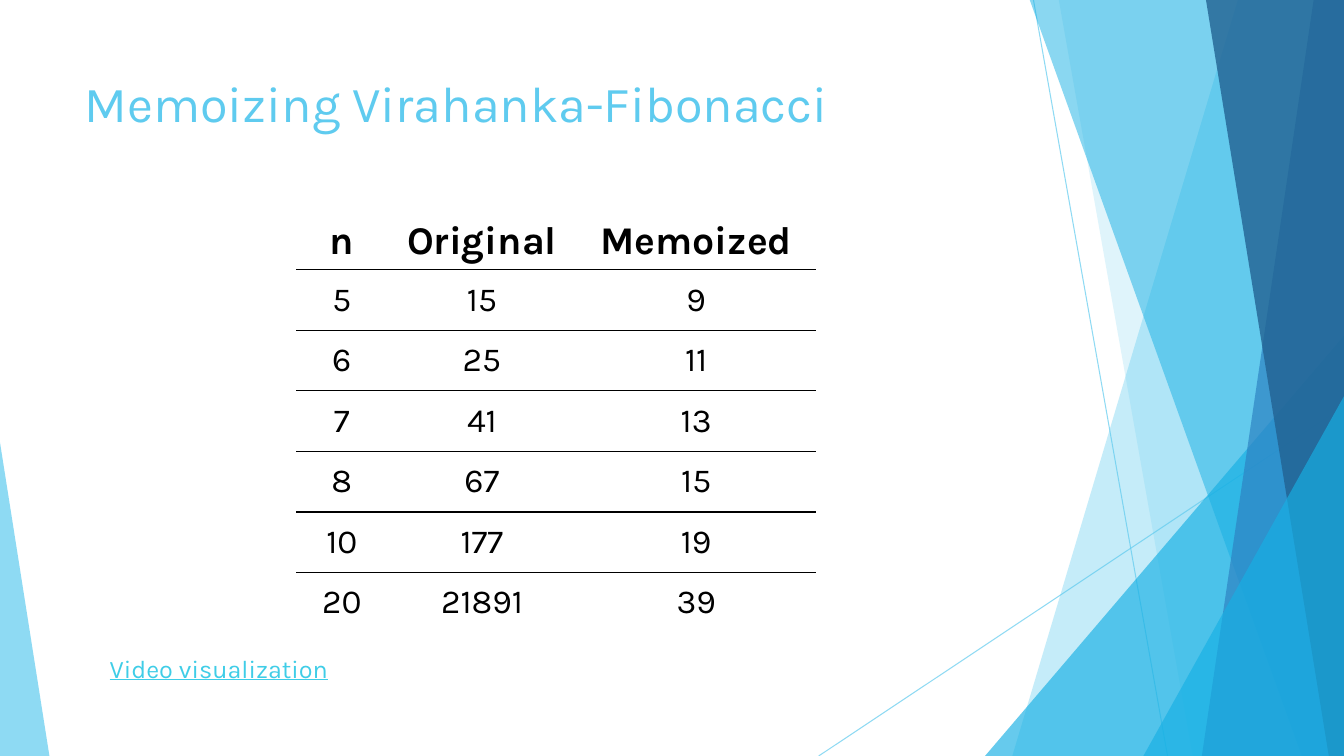
from dataclasses import dataclass

import lxml.etree
import pptx
import pptx.dml.color
import pptx.enum.shapes
import pptx.enum.text
import pptx.oxml.ns
import pptx.presentation
import pptx.shapes.base
import pptx.slide
import pptx.table
import pptx.text.text
import pptx.util

Inches = pptx.util.Inches
SLIDE_WIDTH, SLIDE_HEIGHT = 13.33, 7.5
BLANK_LAYOUT = 6
NO_GRID_STYLE = "{2D5ABB26-0587-4C30-8999-92F81FD0307C}"


@dataclass(frozen=True)
class Theme:
    font: str = "Karla"
    sky: str = "5FCBEF"
    cyan: str = "17B0E4"
    blue: str = "2E83C3"
    navy: str = "226292"
    link: str = "3FCDE7"
    ink: str = "000000"
    title_size: int = 36
    header_size: int = 28
    cell_size: int = 24
    link_size: int = 18
    ray_width: float = 0.75
    rule_width: float = 1


THEME = Theme()


@dataclass(frozen=True)
class Ray:
    start: tuple[float, float]
    end: tuple[float, float]


@dataclass(frozen=True)
class Band:
    """Slanted panel that reaches from its left edge to the right of the slide."""
    top_x: float
    bottom_x: float
    color: str
    opacity: int


@dataclass(frozen=True)
class Corner:
    """Right triangle standing on the bottom of the slide."""
    left: float
    top: float
    width: float
    apex: float
    color: str
    opacity: int


@dataclass(frozen=True)
class TextLine:
    text: str
    left: float
    top: float
    width: float
    height: float
    size: int
    color: str
    underline: bool = False


RAYS = [Ray((10.25, 0), (11.58, 7.5)), Ray((13.33, 4.03), (8.12, 7.5))]
PANELS: list[Band | Corner] = [
    Band(12.28, 10.04, THEME.sky, 36),
    Band(10.5, 11.83, THEME.sky, 20),
    Corner(9.77, 3.33, 3.56, 1, THEME.cyan, 66),
    Band(10.21, 12.91, THEME.cyan, 50),
    Band(13.03, 11.92, THEME.blue, 70),
    Band(11.96, 13.18, THEME.navy, 80),
    Corner(11.34, 3.93, 1.99, 1, THEME.cyan, 66),
    Corner(0, 4.39, 0.49, 0, THEME.sky, 70),
]
TEXT_LINES = [
    TextLine("Memoizing Virahanka-Fibonacci", 0.74, 0.67, 9.4, 1.44,
             THEME.title_size, THEME.sky),
    TextLine("Video visualization", 0.99, 6.43, 6.67, 0.4,
             THEME.link_size, THEME.link, underline=True),
]
CALL_COUNTS = [
    ("n", "Original", "Memoized"),
    ("5", "15", "9"),
    ("6", "25", "11"),
    ("7", "41", "13"),
    ("8", "67", "15"),
    ("10", "177", "19"),
    ("20", "21891", "39"),
]
COLUMN_WIDTHS = (0.9, 1.88, 2.37)
HEADER_HEIGHT, ROW_HEIGHT = 0.55, 0.59


def rgb(color: str) -> pptx.dml.color.RGBColor:
    return pptx.dml.color.RGBColor.from_string(color)


def set_opacity(shape: pptx.shapes.base.BaseShape, percent: int) -> None:
    for color in shape._element.spPr.iter(pptx.oxml.ns.qn("a:srgbClr")):
        alpha = lxml.etree.SubElement(color, pptx.oxml.ns.qn("a:alpha"))
        alpha.set("val", str(percent * 1000))


def style_paragraph(paragraph: pptx.text.text._Paragraph, size: int, color: str) -> None:
    paragraph.font.name = THEME.font
    paragraph.font.size = pptx.util.Pt(size)
    paragraph.font.color.rgb = rgb(color)


def draw_ray(slide: pptx.slide.Slide, ray: Ray) -> None:
    connector = slide.shapes.add_connector(
        pptx.enum.shapes.MSO_CONNECTOR.STRAIGHT,
        *(Inches(value) for value in ray.start + ray.end))
    connector.line.color.rgb = rgb(THEME.sky)
    connector.line.width = pptx.util.Pt(THEME.ray_width)
    set_opacity(connector, 70)
    lxml.etree.SubElement(connector._element.spPr, pptx.oxml.ns.qn("a:effectLst"))


def draw_panel(slide: pptx.slide.Slide, panel: Band | Corner) -> None:
    if isinstance(panel, Band):
        builder = slide.shapes.build_freeform(
            Inches(panel.top_x), Inches(-0.01))
        corners = [(SLIDE_WIDTH, -0.01), (SLIDE_WIDTH, SLIDE_HEIGHT),
                   (panel.bottom_x, SLIDE_HEIGHT)]
        builder.add_line_segments([(Inches(x), Inches(y)) for x, y in corners])
        shape = builder.convert_to_shape()
    else:
        shape = slide.shapes.add_shape(
            pptx.enum.shapes.MSO_SHAPE.ISOSCELES_TRIANGLE,
            Inches(panel.left), Inches(panel.top),
            Inches(panel.width), Inches(SLIDE_HEIGHT - panel.top))
        shape.adjustments[0] = panel.apex
    shape.shadow.inherit = False
    shape.line.fill.background()
    shape.fill.solid()
    shape.fill.fore_color.rgb = rgb(panel.color)
    set_opacity(shape, panel.opacity)


def draw_text_line(slide: pptx.slide.Slide, line: TextLine) -> None:
    box = slide.shapes.add_textbox(
        Inches(line.left), Inches(line.top), Inches(line.width), Inches(line.height))
    box.text_frame.word_wrap = True
    paragraph = box.text_frame.paragraphs[0]
    paragraph.text = line.text
    style_paragraph(paragraph, line.size, line.color)
    if line.underline:
        paragraph.font.underline = True


def add_rules(cell: pptx.table._Cell, sides: list[str]) -> None:
    """Rule the given sides, named lnT and lnB, in that order."""
    properties = cell._tc.get_or_add_tcPr()
    for position, side in enumerate(sides):
        rule = pptx.oxml.parse_xml(
            f'<a:{side} {pptx.oxml.ns.nsdecls("a")} w="{pptx.util.Pt(THEME.rule_width)}">'
            f'<a:solidFill><a:srgbClr val="{THEME.ink}"/></a:solidFill></a:{side}>')
        properties.insert(position, rule)


def draw_call_counts(slide: pptx.slide.Slide) -> None:
    last_row = len(CALL_COUNTS) - 1
    frame = slide.shapes.add_table(
        len(CALL_COUNTS), len(COLUMN_WIDTHS), Inches(2.94), Inches(2.11),
        Inches(sum(COLUMN_WIDTHS)), Inches(HEADER_HEIGHT + last_row * ROW_HEIGHT))
    table = frame.table
    table.horz_banding = False
    table._tbl.tblPr.find(pptx.oxml.ns.qn("a:tableStyleId")).text = NO_GRID_STYLE
    for column, width in zip(table.columns, COLUMN_WIDTHS):
        column.width = Inches(width)
    for row_index, values in enumerate(CALL_COUNTS):
        is_header = row_index == 0
        table.rows[row_index].height = Inches(HEADER_HEIGHT if is_header else ROW_HEIGHT)
        sides = ["lnT"] * (not is_header) + ["lnB"] * (row_index < last_row)
        for column_index, value in enumerate(values):
            cell = table.cell(row_index, column_index)
            cell.fill.background()
            cell.vertical_anchor = pptx.enum.text.MSO_ANCHOR.MIDDLE
            if not is_header:
                cell.margin_left = cell.margin_right = Inches(0.1)
                cell.margin_top = cell.margin_bottom = Inches(0.1)
            paragraph = cell.text_frame.paragraphs[0]
            paragraph.text = value
            paragraph.alignment = pptx.enum.text.PP_ALIGN.CENTER
            style_paragraph(
                paragraph, THEME.header_size if is_header else THEME.cell_size, THEME.ink)
            paragraph.font.bold = is_header
            add_rules(cell, sides)


def main() -> None:
    presentation = pptx.Presentation()
    presentation.slide_width = Inches(SLIDE_WIDTH)
    presentation.slide_height = Inches(SLIDE_HEIGHT)
    slide = presentation.slides.add_slide(presentation.slide_layouts[BLANK_LAYOUT])
    for ray in RAYS:
        draw_ray(slide, ray)
    for panel in PANELS:
        draw_panel(slide, panel)
    for line in TEXT_LINES:
        draw_text_line(slide, line)
    draw_call_counts(slide)
    presentation.save("out.pptx")


if __name__ == "__main__":
    main()
